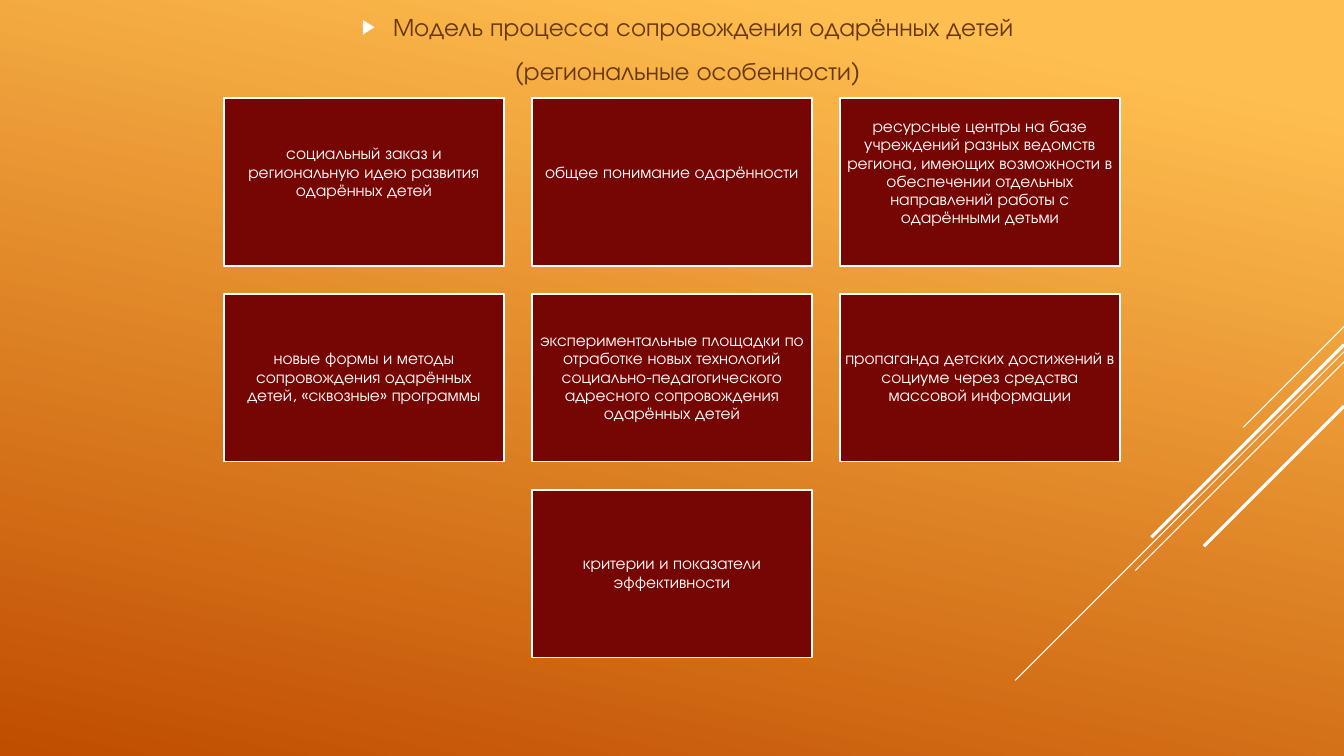
import lxml.etree
import pptx
import pptx.dml.color
import pptx.enum.shapes
import pptx.enum.text
import pptx.oxml.ns
import pptx.util

RGBColor = pptx.dml.color.RGBColor
LIGHT_ORANGE = RGBColor(0xFF, 0xBF, 0x50)
DARK_ORANGE = RGBColor(0xC0, 0x4D, 0x00)
BROWN = RGBColor(0x68, 0x38, 0x0F)
MAROON = RGBColor(0x76, 0x06, 0x03)
WHITE = RGBColor(0xFF, 0xFF, 0xFF)
FONT = "TeX Gyre Adventor"
Inches = pptx.util.Inches
Pt = pptx.util.Pt
qn = pptx.oxml.ns.qn


def format_runs(p, size, color):
    p.alignment = pptx.enum.text.PP_ALIGN.CENTER
    for r in p.runs:
        r.font.name = FONT
        r.font.size = Pt(size)
        r.font.color.rgb = color


prs = pptx.Presentation()
prs.slide_width = Inches(13.33)
prs.slide_height = Inches(7.5)
W = prs.slide_width
s = prs.slides.add_slide(prs.slide_layouts[1])
title = s.shapes.title
title.element.getparent().remove(title.element)

bg = s.background.fill
bg.gradient()
bg.gradient_angle = 258
for stop, position, color in zip(bg.gradient_stops, (0.1, 1), (LIGHT_ORANGE, DARK_ORANGE)):
    stop.position = position
    stop.color.rgb = color

diagonals = [(3.24, 1, 0.75), (3.49, 3.26, 0.75), (3.59, 2.07, 0.75),
             (3.42, 1.91, 2.25), (4.03, 1.39, 2.25)]
for top, run, weight in diagonals:
    line = s.shapes.add_connector(pptx.enum.shapes.MSO_CONNECTOR.STRAIGHT,
                                  W, Inches(top), W - Inches(run), Inches(top + run))
    line.line.color.rgb = WHITE
    line.line.width = Pt(weight)
    lxml.etree.SubElement(line.element.spPr, qn("a:effectLst"))

body = s.placeholders[1]
body.left, body.top, body.width, body.height = Inches(0.55), 0, Inches(12.54), Inches(0.96)
tf = body.text_frame
tf.text = "Модель процесса сопровождения одарённых детей\n(региональные особенности)"
tf.word_wrap = True
tf.auto_size = pptx.enum.text.MSO_AUTO_SIZE.NONE
tf.vertical_anchor = pptx.enum.text.MSO_ANCHOR.MIDDLE
for p in tf.paragraphs:
    format_runs(p, 18, BROWN)
    p.space_before = Pt(3.6)
    p.space_after = Pt(6)

bulleted, plain = [p._p.get_or_add_pPr() for p in tf.paragraphs]
bulleted.set("marL", str(Inches(0.31)))
bulleted.set("indent", str(-Inches(0.31)))
bullet_color = lxml.etree.SubElement(bulleted, qn("a:buClr"))
lxml.etree.SubElement(bullet_color, qn("a:srgbClr"), val=str(WHITE))
lxml.etree.SubElement(bulleted, qn("a:buSzPct"), val="80000")
lxml.etree.SubElement(bulleted, qn("a:buFont"), typeface="Arial")
lxml.etree.SubElement(bulleted, qn("a:buChar"), char="▶")
plain.set("marL", "0")
plain.set("indent", "0")
lxml.etree.SubElement(plain, qn("a:buNone"))

card_w = W / 4.8
card_h = card_w * 0.6
gap = card_w / 10
grid_left = W / 6
grid_top = Inches(0.97)
rows = [
    (0, 0.23, ["социальный заказ и региональную идею развития одарённых детей",
               "общее понимание одарённости",
               "ресурсные центры на базе учреждений разных ведомств региона, имеющих "
               "возможности в обеспечении отдельных направлений работы с одарёнными детьми"]),
    (0, 0.05, ["новые формы и методы сопровождения одарённых детей, «сквозные» программы",
               "экспериментальные площадки по отработке новых технологий "
               "социально-педагогического адресного сопровождения одарённых детей",
               "пропаганда детских достижений в социуме через средства массовой информации"]),
    (1, 0.05, ["критерии и показатели эффективности"]),
]
for row, (first_col, bottom_margin, texts) in enumerate(rows):
    for col, text in enumerate(texts, first_col):
        sp = s.shapes.add_shape(pptx.enum.shapes.MSO_SHAPE.RECTANGLE,
                                int(grid_left + col * (card_w + gap)),
                                int(grid_top + row * (card_h + gap)),
                                int(card_w), int(card_h))
        sp.shadow.inherit = False
        sp.fill.solid()
        sp.fill.fore_color.rgb = MAROON
        sp.line.color.rgb = WHITE
        sp.line.width = Pt(1.25)
        tf = sp.text_frame
        tf.word_wrap = True
        tf.vertical_anchor = pptx.enum.text.MSO_ANCHOR.MIDDLE
        tf.margin_left = tf.margin_right = tf.margin_top = Inches(0.05)
        tf.margin_bottom = Inches(bottom_margin)
        p = tf.paragraphs[0]
        p.text = text
        p.line_spacing = 0.9
        p.space_after = Pt(4.2)
        format_runs(p, 12, WHITE)

prs.save("out.pptx")
